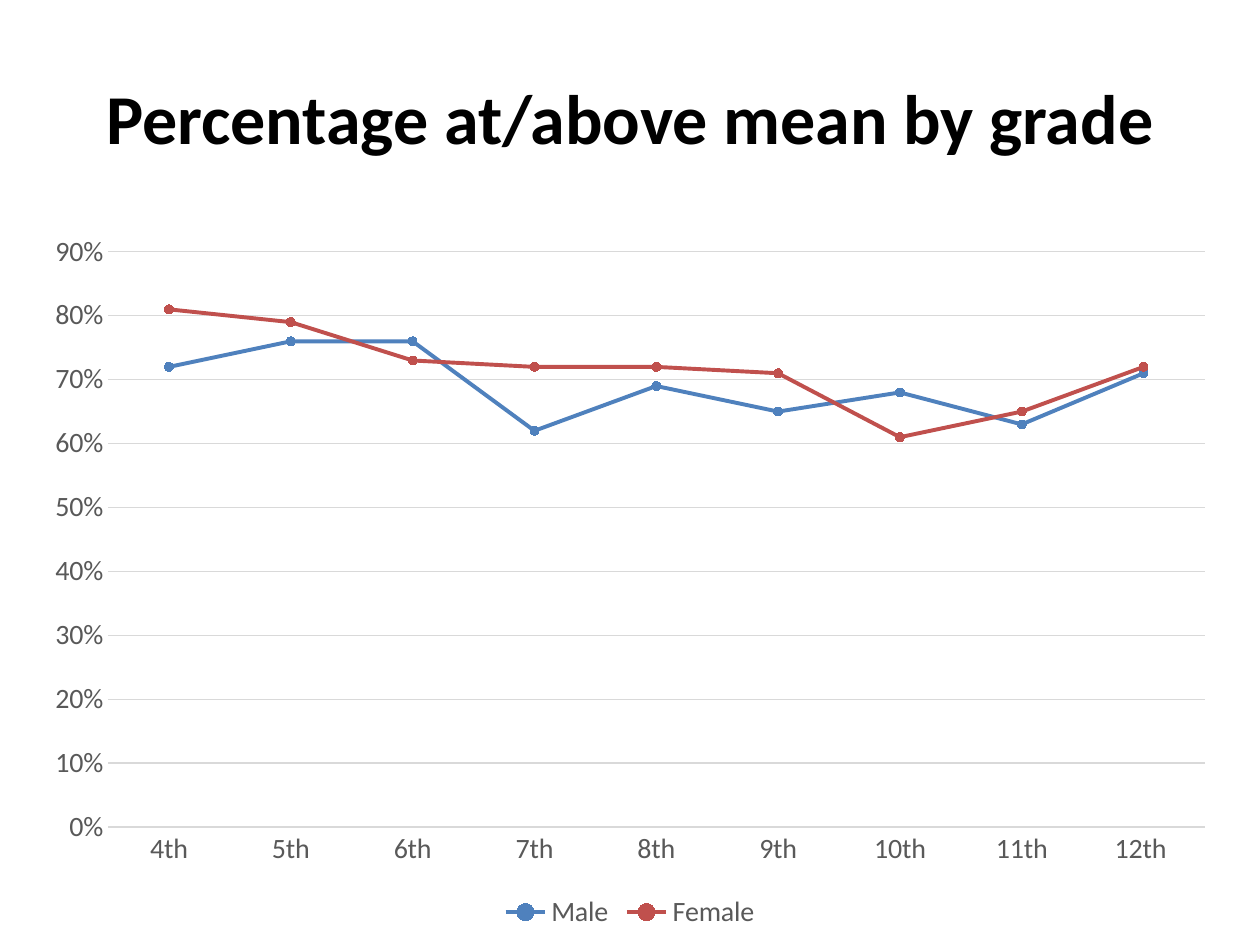
import dataclasses
from typing import Any

import pptx
import pptx.chart.data
import pptx.dml.color
import pptx.enum.chart
import pptx.enum.text
import pptx.util

PX = 9144  # EMU per px, 100 px to the inch
FONT = "Calibri"
BLACK, GREY, PALE = "000000", "595959", "D9D9D9"


@dataclasses.dataclass(frozen=True)
class Box:
    left: int
    top: int
    width: int
    height: int


@dataclasses.dataclass(frozen=True)
class GradeSeries:
    name: str
    values: tuple[float, ...]
    color: str


TITLE_BOX = Box(50, 30, 900, 125)
CHART_BOX = Box(25, 175, 950, 567)
GRADES = ("4th", "5th", "6th", "7th", "8th", "9th", "10th", "11th", "12th ")
SERIES = (
    GradeSeries("Male", (0.72, 0.76, 0.76, 0.62, 0.69, 0.65, 0.68, 0.63, 0.71), "4F81BD"),
    GradeSeries("Female", (0.81, 0.79, 0.73, 0.72, 0.72, 0.71, 0.61, 0.65, 0.72), "C0504D"),
)


def rgb(color: str) -> pptx.dml.color.RGBColor:
    return pptx.dml.color.RGBColor.from_string(color)


def set_attrs(obj: Any, values: dict[str, Any]) -> None:
    for name, value in values.items():
        setattr(obj, name, value)


def emu(box: Box) -> dict[str, int]:
    return {name: px * PX for name, px in dataclasses.asdict(box).items()}


def format_font(font: Any, size: int, color: str, bold: bool = False) -> None:
    set_attrs(font, {"name": FONT, "size": pptx.util.Pt(size), "bold": bold})
    font.color.rgb = rgb(color)


def format_line(line: Any, color: str, width: float) -> None:
    line.color.rgb = rgb(color)
    line.width = pptx.util.Pt(width)


def add_title(s: Any, text: str) -> None:
    sp = s.shapes.title
    set_attrs(sp, emu(TITLE_BOX))
    tf = sp.text_frame
    set_attrs(tf, {"word_wrap": True, "vertical_anchor": pptx.enum.text.MSO_ANCHOR.MIDDLE})
    p = tf.paragraphs[0]
    p.alignment = pptx.enum.text.PP_ALIGN.CENTER
    r = p.add_run()
    r.text = text
    format_font(r.font, 40, BLACK, bold=True)


def format_axes(chart: Any) -> None:
    for axis in (chart.category_axis, chart.value_axis):
        set_attrs(axis, {
            "major_tick_mark": pptx.enum.chart.XL_TICK_MARK.NONE,
            "minor_tick_mark": pptx.enum.chart.XL_TICK_MARK.NONE,
        })
        format_font(axis.tick_labels.font, 16, GREY)
    format_line(chart.category_axis.format.line, PALE, 0.75)

    percent = chart.value_axis
    set_attrs(percent, {"minimum_scale": 0, "maximum_scale": 0.9, "major_unit": 0.1})
    set_attrs(percent.tick_labels, {"number_format": "0%", "number_format_is_linked": False})
    percent.format.line.fill.background()
    format_line(percent.major_gridlines.format.line, PALE, 0.75)


def format_series(series: Any, color: str) -> None:
    series.smooth = False
    format_line(series.format.line, color, 2.25)
    marker = series.marker
    set_attrs(marker, {"style": pptx.enum.chart.XL_MARKER_STYLE.CIRCLE, "size": 5})
    marker.format.fill.solid()
    marker.format.fill.fore_color.rgb = rgb(color)
    format_line(marker.format.line, color, 0.75)


def add_grade_chart(s: Any) -> None:
    data = pptx.chart.data.CategoryChartData(number_format="0%")
    data.categories = GRADES
    for item in SERIES:
        data.add_series(item.name, item.values)
    box = emu(CHART_BOX)
    chart = s.shapes.add_chart(
        pptx.enum.chart.XL_CHART_TYPE.LINE_MARKERS,
        box["left"], box["top"], box["width"], box["height"], data,
    ).chart
    set_attrs(chart, {"has_title": False, "has_legend": True})
    format_font(chart.font, 10, BLACK)
    set_attrs(chart.legend, {
        "position": pptx.enum.chart.XL_LEGEND_POSITION.BOTTOM,
        "include_in_layout": False,
    })
    format_font(chart.legend.font, 16, GREY)
    format_axes(chart)
    plot = chart.plots[0]
    plot.vary_by_categories = False
    for series, item in zip(plot.series, SERIES):
        format_series(series, item.color)


def main() -> None:
    prs = pptx.Presentation()
    set_attrs(prs, {"slide_width": 1000 * PX, "slide_height": 750 * PX})
    s = prs.slides.add_slide(prs.slide_layouts[5])
    add_title(s, "Percentage at/above mean by grade")
    add_grade_chart(s)
    prs.save("out.pptx")


if __name__ == "__main__":
    main()
